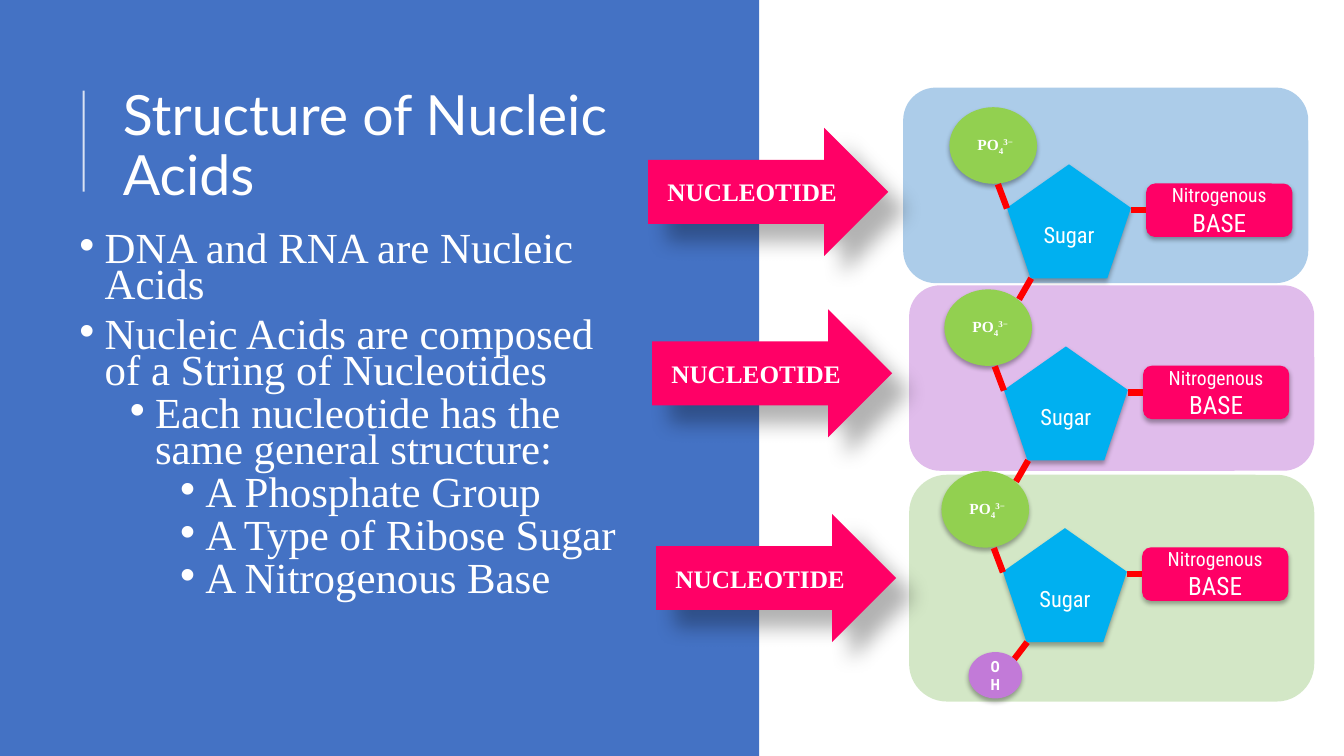
from lxml import etree
from pptx import Presentation
from pptx import util as u
from pptx.dml.color import RGBColor
from pptx.enum import shapes, text
from pptx.oxml.ns import qn

SHAPE = shapes.MSO_SHAPE
SERIF, SANS = "Times New Roman", "Roboto Condensed"
WHITE, BLUE, PINK, PURPLE = "FFFFFF", "4472C4", "FF0066", "C27AD8"
SOFT_SHADOW = (32, 3.5, 2.2, 90)
DEEP_SHADOW = (30, 15, 18, 45)
BULLETS = [
    (0, "DNA and RNA are Nucleic Acids"),
    (0, "Nucleic Acids are composed of a String of Nucleotides"),
    (1, "Each nucleotide has the same general structure:"),
    (2, "A Phosphate Group"),
    (2, "A Type of Ribose Sugar"),
    (2, "A Nitrogenous Base"),
]


def color(code):
    """Turn a hex string into a colour."""
    return RGBColor.from_string(code)


def apply(target, values):
    """Set each named attribute on the target."""
    for name, value in values.items():
        setattr(target, name, value)


def add_child(parent, tag, **attributes):
    """Append a drawing element with the given attributes."""
    child = etree.SubElement(parent, qn(tag))
    for name, value in attributes.items():
        child.set(name, str(value))
    return child


def set_opacity(item, percent):
    """Make the item's own colours partly transparent."""
    for tone in item.element.spPr.iter(qn("a:srgbClr")):
        add_child(tone, "a:alpha", val=percent * 1000)


def add_shadow(shape, opacity, blur, distance, angle):
    """Give a shape an outer black shadow."""
    effects = shape.element.spPr.find(qn("a:effectLst"))
    shadow = add_child(effects, "a:outerShdw", blurRad=u.Pt(blur), dist=u.Pt(distance),
                       dir=angle * 60000, algn="ctr", rotWithShape=0)
    tone = add_child(shadow, "a:srgbClr", val="000000")
    add_child(tone, "a:alpha", val=opacity * 1000)


def add_span(para, words, size, font, bold=False, baseline=0):
    """Add a white run, raised or lowered by a baseline percentage."""
    span = para.add_run()
    span.text = words
    apply(span.font, {"size": u.Pt(size), "name": font, "bold": bold})
    span.font.color.rgb = color(WHITE)
    if baseline:
        span.font._element.set("baseline", str(baseline * 1000))


def add_block(page, kind, place, fill, shadow=None, lines=(), opacity=100):
    """Add a filled shape with centred lines, each a list of spans."""
    shape = page.shapes.add_shape(kind, *map(u.Pt, place))
    shape.shadow.inherit = False
    shape.fill.solid()
    shape.fill.fore_color.rgb = color(fill)
    shape.line.fill.background()
    if opacity < 100:
        set_opacity(shape, opacity)
    if shadow:
        add_shadow(shape, *shadow)
    frame = shape.text_frame
    apply(frame, {"word_wrap": True, "vertical_anchor": text.MSO_ANCHOR.MIDDLE})
    for index, spans in enumerate(lines):
        para = frame.add_paragraph() if index else frame.paragraphs[0]
        para.alignment = text.PP_ALIGN.CENTER
        for span in spans:
            add_span(para, *span)
    return shape


def add_line(page, start, end, tone="FF0000", width=4.5):
    """Add a straight line between two points."""
    line = page.shapes.add_connector(shapes.MSO_CONNECTOR.STRAIGHT, *map(u.Pt, start + end))
    line.line.color.rgb = color(tone)
    line.line.width = u.Pt(width)
    add_child(line.element.spPr, "a:effectLst")
    return line


def place_title(page, words):
    """Move the title in front of the blue panel and format it."""
    title = page.shapes.title
    page.shapes.element.append(title.element)
    apply(title, dict(zip(("left", "top", "width", "height"), map(u.Pt, (80.6, 46.1, 398.9, 118.1)))))
    apply(title.text_frame, {"word_wrap": True, "auto_size": text.MSO_AUTO_SIZE.NONE,
                             "vertical_anchor": text.MSO_ANCHOR.MIDDLE})
    para = title.text_frame.paragraphs[0]
    apply(para, {"alignment": text.PP_ALIGN.LEFT, "line_spacing": 0.9})
    add_span(para, words, 39.6, "Lato")


def add_bullets(page, place, items):
    """Add a bulleted list with one indent step per level."""
    box = page.shapes.add_textbox(*map(u.Pt, place))
    box.text_frame.word_wrap = True
    for index, (level, words) in enumerate(items):
        para = box.text_frame.add_paragraph() if index else box.text_frame.paragraphs[0]
        properties = para._p.get_or_add_pPr()
        properties.set("marL", str(u.Pt(18 + 36 * level)))
        properties.set("indent", str(u.Pt(-18)))
        add_child(properties, "a:buClr").append(etree.Element(qn("a:srgbClr"), val=WHITE))
        add_child(properties, "a:buFont", typeface="Arial")
        add_child(properties, "a:buChar", char="•")
        before = 0 if index == 0 else 5 if level else 10
        apply(para, {"level": level, "line_spacing": 0.7, "space_before": u.Pt(before)})
        add_span(para, words, 30.6, SERIF)


def add_nucleotide(page, x, y, phosphate_x, tail):
    """Add phosphate, sugar and base around a sugar at x, y, with their bonds."""
    phosphate = [(" PO", 11, SERIF, True), ("4", 11, SERIF, True, -25), ("3−", 11, SERIF, True, 30)]
    base = [[("Nitrogenous", 14, SANS)], [("BASE", 18, SANS)]]
    add_block(page, SHAPE.OVAL, (phosphate_x, y - 40.8, 62.6, 54.7), "92D050", SOFT_SHADOW, [phosphate])
    add_block(page, SHAPE.REGULAR_PENTAGON, (x, y, 88.6, 81.4), "00B0F0", SOFT_SHADOW,
              [[("Sugar", 16, SANS)]])
    base_box = add_block(page, SHAPE.ROUNDED_RECTANGLE, (x + 99.4, y + 13.7, 104.4, 38.2),
                         PINK, SOFT_SHADOW, base)
    add_line(page, (x - 6.5, y + 14.2), (x, y + 31.5))
    add_line(page, (x + 88.6, y + 32.8), (x + 99.4, y + 32.8)).end_connect(base_box, 1)
    add_line(page, (x + 17.3, y + 81.4), (x + tail[0], y + tail[1]))


def main():
    """Build the slide and save it."""
    deck = Presentation()
    apply(deck, {"slide_width": u.Pt(960), "slide_height": u.Pt(540)})
    page = deck.slides.add_slide(deck.slide_layouts[5])

    for x, y, height, fill in ((649.4, 339.1, 162, "A9D18E"), (649.4, 203.8, 132.5, PURPLE),
                               (645.1, 62.6, 139.7, "5B9BD5")):
        add_block(page, SHAPE.ROUNDED_RECTANGLE, (x, y, 289.4, height), fill, opacity=50)
    add_block(page, SHAPE.RECTANGLE, (0, 0, 542.2, 540), BLUE)
    set_opacity(add_line(page, (59.8, 136.8), (59.8, 64.8), WHITE, 1.5), 80)
    place_title(page, "Structure of Nucleic Acids")
    add_bullets(page, (49.7, 164.2, 400.3, 309.6), BULLETS)

    for x, y, phosphate_x, tail in ((719.3, 117.4, 678.2, (8.6, 96.5)),
                                    (717.1, 247.5, 674.6, (8.6, 96.5)),
                                    (716.4, 377.3, 672.5, (8, 93.6))):
        add_nucleotide(page, x, y, phosphate_x, tail)
    add_block(page, SHAPE.OVAL, (691.9, 465.8, 38.2, 33.1), PURPLE, SOFT_SHADOW,
              [[("OH", 11, SANS, True)]])
    for x, y in ((463, 91.4), (465.8, 221), (468.7, 367.2)):
        add_block(page, SHAPE.RIGHT_ARROW, (x, y, 171.4, 91.4), PINK, DEEP_SHADOW,
                  [[("NUCLEOTIDE", 18, SERIF, True)]])
    deck.save("out.pptx")


if __name__ == "__main__":
    main()
